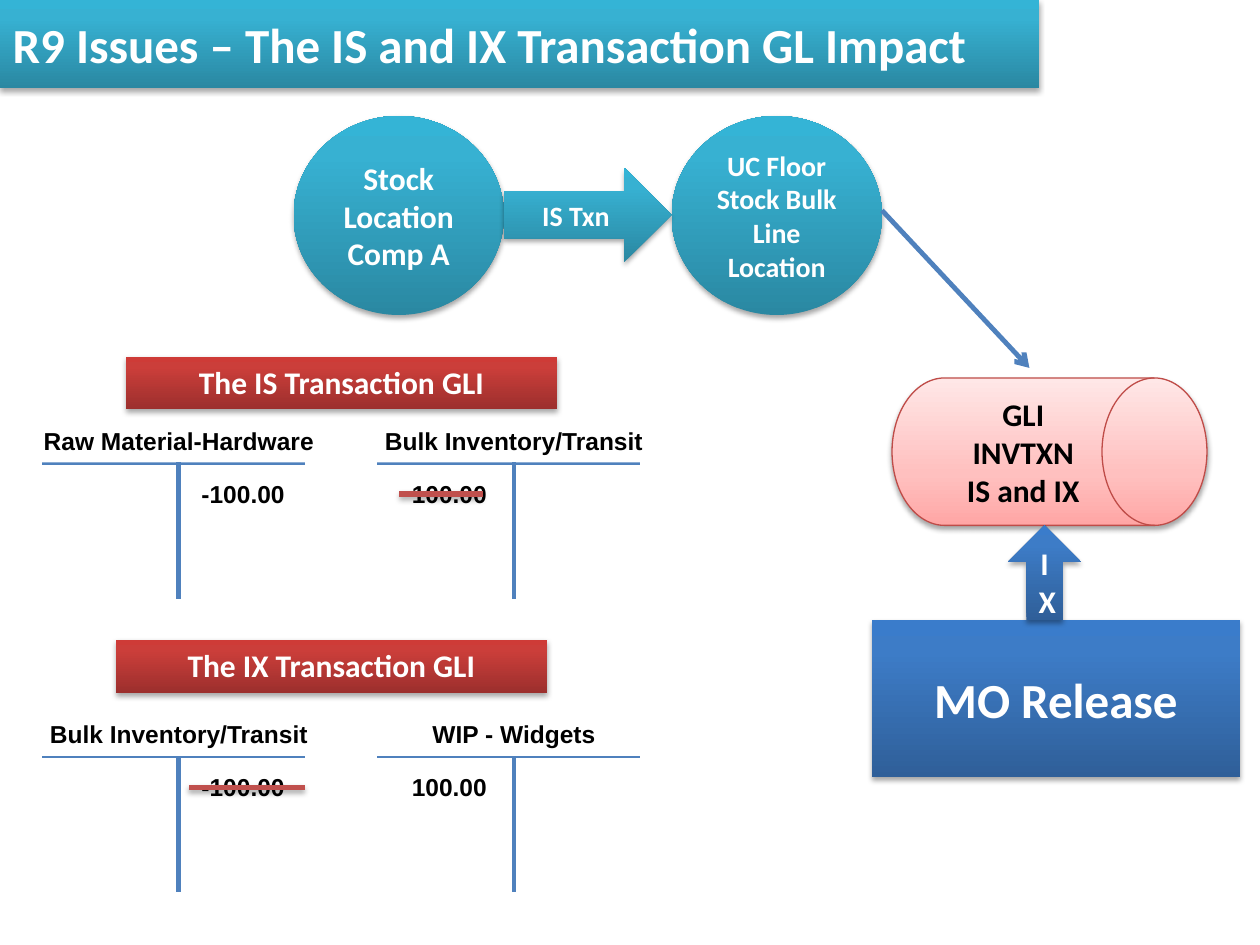
from copy import deepcopy

from lxml import etree
from pptx import Presentation
from pptx.dml.color import RGBColor
from pptx.enum.shapes import MSO_CONNECTOR, MSO_SHAPE
from pptx.enum.text import MSO_ANCHOR, MSO_AUTO_SIZE, PP_ALIGN
from pptx.oxml import parse_xml
from pptx.oxml.ns import nsdecls, qn
from pptx.util import Inches, Pt

LEFT, CENTER = PP_ALIGN.LEFT, PP_ALIGN.CENTER
TOP, MIDDLE = MSO_ANCHOR.TOP, MSO_ANCHOR.MIDDLE
STRAIGHT = MSO_CONNECTOR.STRAIGHT
RECT, OVAL = MSO_SHAPE.RECTANGLE, MSO_SHAPE.OVAL
RIGHT_ARROW, UP_ARROW = MSO_SHAPE.RIGHT_ARROW, MSO_SHAPE.UP_ARROW
DRUM = MSO_SHAPE.FLOWCHART_DIRECT_ACCESS_STORAGE

WHITE = RGBColor(0xFF, 0xFF, 0xFF)
BLACK = RGBColor(0, 0, 0)
LINE_BLUE = RGBColor(0x4F, 0x81, 0xBD)
STRIKE_RED = RGBColor(0xC0, 0x50, 0x4D)
DRUM_EDGE = RGBColor(0xBF, 0x4C, 0x48)


def gradient(bottom, middle, top, position=0.8):
    colors = [RGBColor.from_string(c) for c in (bottom, middle, top)]
    return list(zip((0, position, 1), colors))


TEAL = gradient("2A88A2", "37B1D2", "34B4D6")
BLUE = gradient("2F5F99", "3D7CC7", "3A7CCB")
RED = gradient("9C2F2D", "CB3E3A", "CE3B37")
PINK = gradient("FFA6A5", "FFC0BF", "FFE7E7", 0.35)


def set_effects(spPr, shadow=True):
    for old in spPr.findall(qn("a:effectLst")):
        spPr.remove(old)
    effects = etree.SubElement(spPr, qn("a:effectLst"))
    if shadow:
        effects.append(parse_xml(
            f'<a:outerShdw {nsdecls("a")} blurRad="{Pt(3.1)}" dist="{Pt(1.8)}" '
            'dir="5400000" rotWithShape="0"><a:srgbClr val="000000">'
            '<a:alpha val="35000"/></a:srgbClr></a:outerShdw>'))


def fill_gradient(sp, stops):
    sp.fill.gradient()
    sp.fill.gradient_angle = 90
    stop_list = sp._element.spPr.find(qn("a:gradFill")).find(qn("a:gsLst"))
    stop_list.append(deepcopy(stop_list[0]))
    for stop, (position, color) in zip(sp.fill.gradient_stops, stops):
        stop.position = position
        stop.color.rgb = color


def write(sp, lines, size, color, font="Calibri", align=CENTER, anchor=MIDDLE):
    tf = sp.text_frame
    tf.word_wrap = True
    tf.vertical_anchor = anchor
    for i, line in enumerate(lines):
        p = tf.paragraphs[0] if i == 0 else tf.add_paragraph()
        p.alignment = align
        r = p.add_run()
        r.text = line
        r.font.name = font
        r.font.size = Pt(size)
        r.font.bold = True
        r.font.color.rgb = color


def add_block(s, kind, box, stops, lines, size, color=WHITE, edge=None):
    sp = s.shapes.add_shape(kind, *map(Inches, box))
    fill_gradient(sp, stops)
    if edge:
        sp.line.color.rgb = edge
        sp.line.width = Pt(0.75)
    else:
        sp.line.fill.background()
    set_effects(sp._element.spPr)
    write(sp, lines, size, color)
    return sp


def add_line(s, x1, y1, x2, y2, color=LINE_BLUE, width=2.75, shadow=False):
    line = s.shapes.add_connector(STRAIGHT, *map(Inches, (x1, y1, x2, y2)))
    line.line.color.rgb = color
    line.line.width = Pt(width)
    set_effects(line._element.spPr, shadow)
    return line


def add_label(s, box, text, align):
    sp = s.shapes.add_shape(RECT, *map(Inches, box))
    sp.fill.solid()
    sp.fill.fore_color.rgb = WHITE
    sp.line.fill.background()
    sp.shadow.inherit = False
    write(sp, [text], 14, BLACK, "Arial", align, TOP)
    sp.text_frame.auto_size = MSO_AUTO_SIZE.SHAPE_TO_FIT_TEXT
    return sp


def add_title(s, x, y, w, h):
    title = s.shapes.title
    title.left, title.top, title.width, title.height = map(Inches, (x, y, w, h))
    fill_gradient(title, TEAL)
    set_effects(title._element.spPr)
    write(title, ["R9 Issues – The IS and IX Transaction GL Impact"], 28, WHITE, align=LEFT)


def add_transfer(s, x, y):
    w, h, gap = 1.67, 1.58, 1.33
    add_block(s, OVAL, (x, y, w, h), TEAL, ["Stock", "Location", "Comp A"], 18)
    add_block(s, OVAL, (x + w + gap, y, w, h), TEAL,
              ["UC Floor", "Stock Bulk", "Line Location"], 16)
    add_block(s, RIGHT_ARROW, (x + w, y + 0.41, gap, 0.75), TEAL, ["IS Txn"], 16)


def add_release(s, x, y):
    arrow = add_line(s, x + 0.08, y - 1.33, x + 1.25, y - 0.08)
    etree.SubElement(arrow.line._get_or_add_ln(), qn("a:tailEnd"), type="arrow")
    add_block(s, DRUM, (x + 0.16, y, 2.5, 1.17), PINK,
              ["GLI", "INVTXN", "IS and IX"], 18, BLACK, DRUM_EDGE)
    add_block(s, RECT, (x, y + 1.92, 2.92, 1.25), BLUE, ["MO Release"], 28)
    add_block(s, UP_ARROW, (x + 1.08, y + 1.17, 0.58, 0.75), BLUE, ["IX"], 18)


def add_account(s, x, y, name, amount, strike):
    bar_y = y + 0.34
    add_line(s, x + 0.16, bar_y, x + 2.25, bar_y)
    label = add_label(s, (x, y, 2.5, 0.34), name, CENTER)
    stem = add_line(s, x + 1.25, bar_y, x + 1.25, bar_y + 1.08)
    stem.begin_connect(label, 2)
    offset, w = (1.33, 1.08) if amount.startswith("-") else (0.34, 0.83)
    add_label(s, (x + offset, y + 0.42, w, 0.34), amount, LEFT)
    if strike:
        add_line(s, x + offset, y + 0.59, x + offset + strike, y + 0.59,
                 STRIKE_RED, 3, True)


def add_ledger(s, x, y, heading, heading_x, heading_y, accounts):
    sp = add_block(s, RECT, (heading_x, heading_y, 3.42, 0.42), RED, [heading], 18)
    sp.text_frame.vertical_anchor = TOP
    sp.text_frame.auto_size = MSO_AUTO_SIZE.SHAPE_TO_FIT_TEXT
    for i, account in enumerate(accounts):
        add_account(s, x + i * 2.66, y, *account)


def main():
    prs = Presentation()
    prs.slide_width, prs.slide_height = Inches(10), Inches(7.5)
    s = prs.slides.add_slide(prs.slide_layouts[5])
    add_title(s, 0, 0, 8.25, 0.7)
    add_transfer(s, 2.33, 0.92)
    add_release(s, 6.92, 3)
    add_ledger(s, 0.17, 3.33, "The IS Transaction GLI", 1, 2.83, [
        ("Raw Material-Hardware", "-100.00", None),
        ("Bulk Inventory/Transit", "100.00", 0.66)])
    add_ledger(s, 0.17, 5.66, "The IX Transaction GLI", 0.92, 5.08, [
        ("Bulk Inventory/Transit", "-100.00", 0.92),
        ("WIP - Widgets", "100.00", None)])
    prs.save("out.pptx")


if __name__ == "__main__":
    main()
